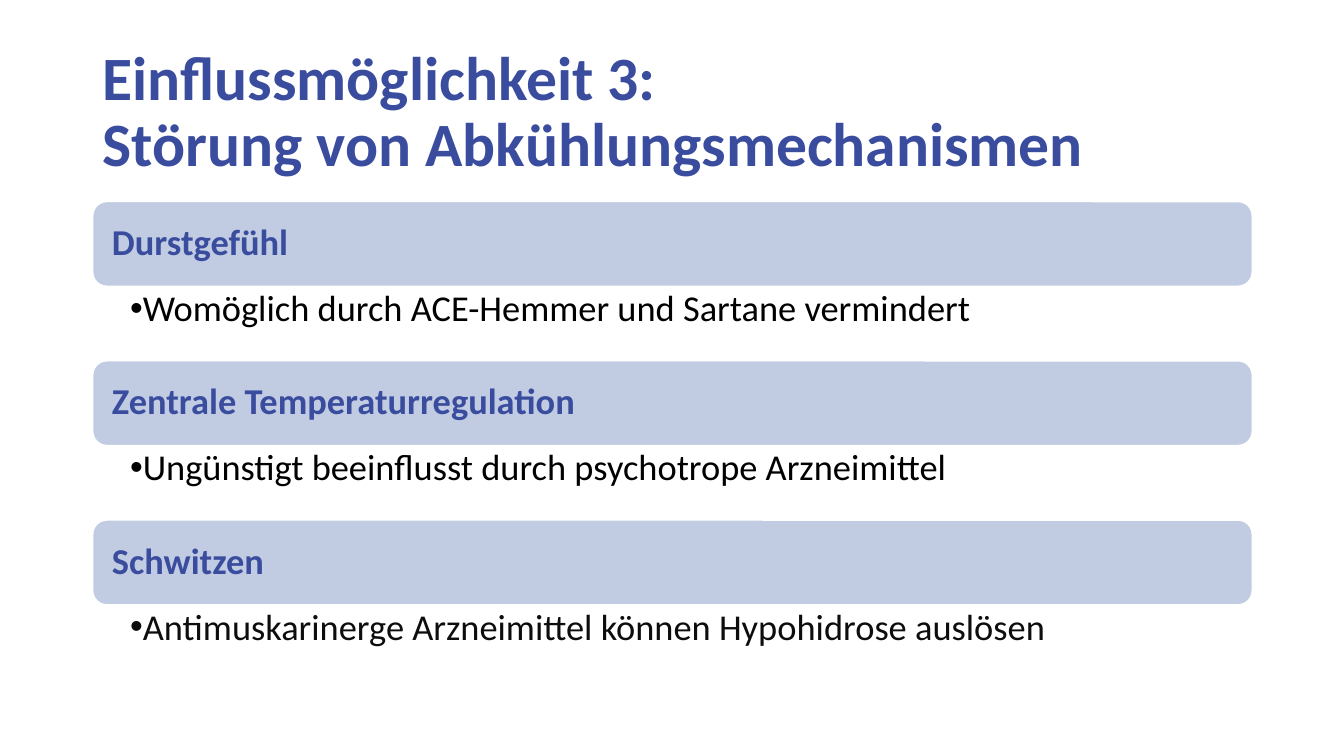
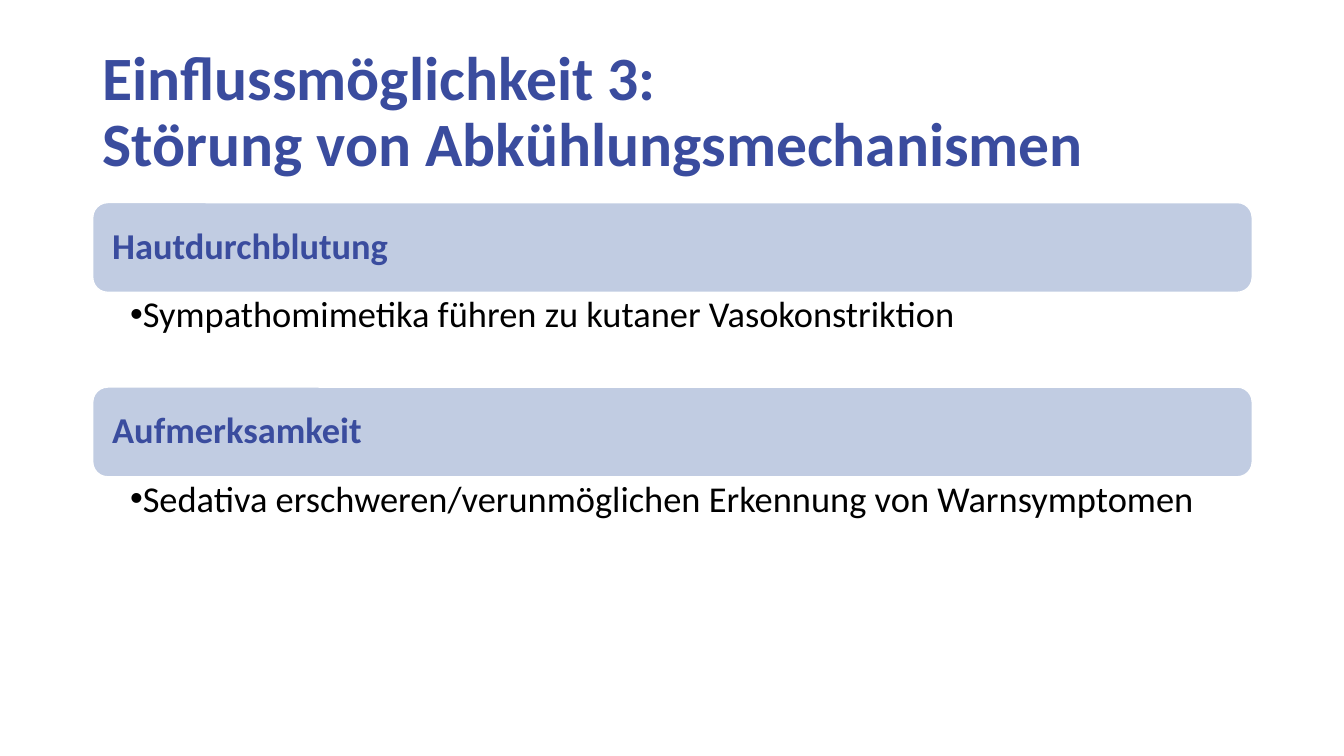
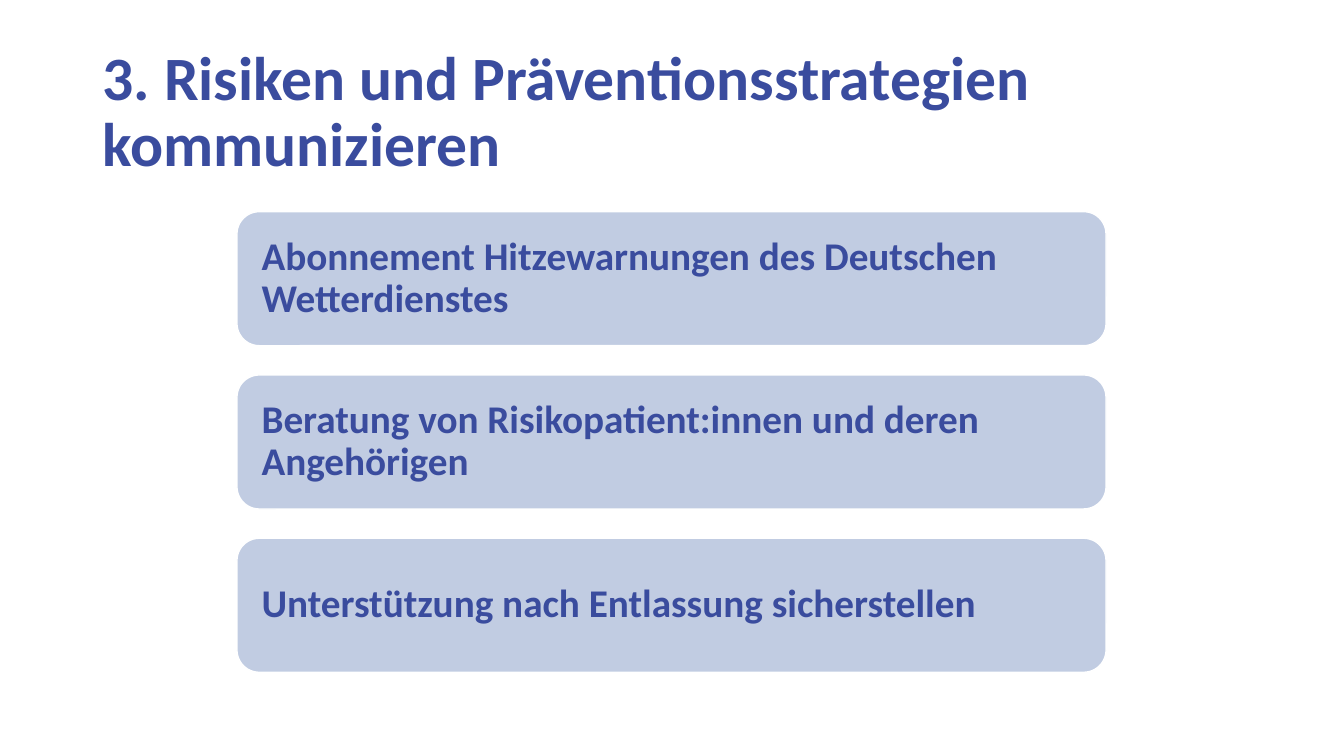
from lxml.etree import SubElement as Sub
from pptx import Presentation
from pptx.dml.color import RGBColor
from pptx.enum.shapes import MSO_SHAPE as Shape
from pptx.enum.text import MSO_ANCHOR as Anchor, PP_ALIGN as Align
from pptx.oxml.ns import qn
from pptx.util import Inches, Pt

FONT = "Calibri"
BLUE, BAND, WHITE, BLACK, SOFT = "3A4C9E", "4465A8", "FFFFFF", "000000", "0D0D0D"
LEFT, WIDE = 0.92, 11.5


def paint(form, color):
    """Set a solid colour on a fill or a font colour."""
    if hasattr(form, "solid"):
        form.solid()
        form = form.fore_color
    form.rgb = RGBColor.from_string(color)


def write(shape, text, size, color, bold, anchor, insets):
    """Write one left-aligned paragraph and return it."""
    frame = shape.text_frame
    frame.word_wrap = True
    frame.vertical_anchor = anchor
    sides = [Inches(inset) for inset in insets]
    frame.margin_left, frame.margin_top, frame.margin_right, frame.margin_bottom = sides
    frame.text = text
    para = frame.paragraphs[0]
    para.alignment = Align.LEFT
    para.line_spacing = 0.9
    for run in para.runs:
        run.font.name, run.font.size, run.font.bold = FONT, Pt(size), bold
        paint(run.font.color, color)
    return para


def add_box(slide, box):
    """Add an empty text box."""
    return slide.shapes.add_textbox(*map(Inches, box))


def add_title(slide, text):
    """Add the slide title."""
    box = add_box(slide, (LEFT, 0.4, WIDE, 1.45))
    write(box, text, 44, BLUE, True, Anchor.MIDDLE, (0.1, 0.05, 0.1, 0.05))


def add_band(slide, box, text, size, inset):
    """Add a pale rounded band with a bold label."""
    band = slide.shapes.add_shape(Shape.ROUNDED_RECTANGLE, *map(Inches, box))
    band.shadow.inherit = False
    paint(band.fill, BAND)
    tint = band.fill._xPr.find(qn("a:solidFill"))[0]
    Sub(tint, qn("a:alpha"), val="33000")
    paint(band.line.fill, WHITE)
    band.line.width = Pt(1)
    write(band, text, size, BLUE, True, Anchor.MIDDLE, (inset,) * 4)


def add_note(slide, box, text, color):
    """Add a bulleted line under a band."""
    para = write(add_box(slide, box), text, 26, color, False, Anchor.TOP,
                 (0.37, 0.04, 0.2, 0.04))
    props = para._p.get_or_add_pPr()
    Sub(props, qn("a:buFont"), typeface="Arial")
    Sub(props, qn("a:buChar"), char="•")


def topic_slide(slide, title, top, high, step, topics):
    """Fill a slide with bands, each followed by a note."""
    add_title(slide, title)
    for i, (label, note, color) in enumerate(topics):
        y = top + i * step
        add_band(slide, (LEFT, y, WIDE, high), label, 26, 0.15)
        add_note(slide, (LEFT, y + high, WIDE, step - high), note, color)


def list_slide(slide, title, box, step, labels):
    """Fill a slide with a column of large bands."""
    add_title(slide, title)
    left, top, wide, high = box
    for i, label in enumerate(labels):
        add_band(slide, (left, top + i * step, wide, high), label, 28, 0.18)


def main():
    """Build and save the slides."""
    deck = Presentation()
    deck.slide_width, deck.slide_height = Inches(13.33), Inches(7.5)
    first, second, third = [deck.slides.add_slide(deck.slide_layouts[6]) for _ in range(3)]
    title = "Einflussmöglichkeit 3:\vStörung von Abkühlungsmechanismen"
    topic_slide(first, title, 2, 0.84, 1.58, [
        ("Durstgefühl", "Womöglich durch ACE-Hemmer und Sartane vermindert", BLACK),
        ("Zentrale Temperaturregulation",
         "Ungünstigt beeinflusst durch psychotrope Arzneimittel", BLACK),
        ("Schwitzen", "Antimuskarinerge Arzneimittel können Hypohidrose auslösen", SOFT),
    ])
    topic_slide(second, title, 2.01, 0.89, 1.83, [
        ("Hautdurchblutung", "Sympathomimetika führen zu kutaner Vasokonstriktion", BLACK),
        ("Aufmerksamkeit",
         "Sedativa erschweren/verunmöglichen Erkennung von Warnsymptomen", BLACK),
    ])
    list_slide(third, "3. Risiken und Präventionsstrategien kommunizieren",
               (2.35, 2.1, 8.62, 1.33), 1.62, [
                   "Abonnement Hitzewarnungen des Deutschen Wetterdienstes",
                   "Beratung von Risikopatient:innen und deren Angehörigen",
                   "Unterstützung nach Entlassung sicherstellen",
               ])
    deck.save("out.pptx")


if __name__ == "__main__":
    main()
